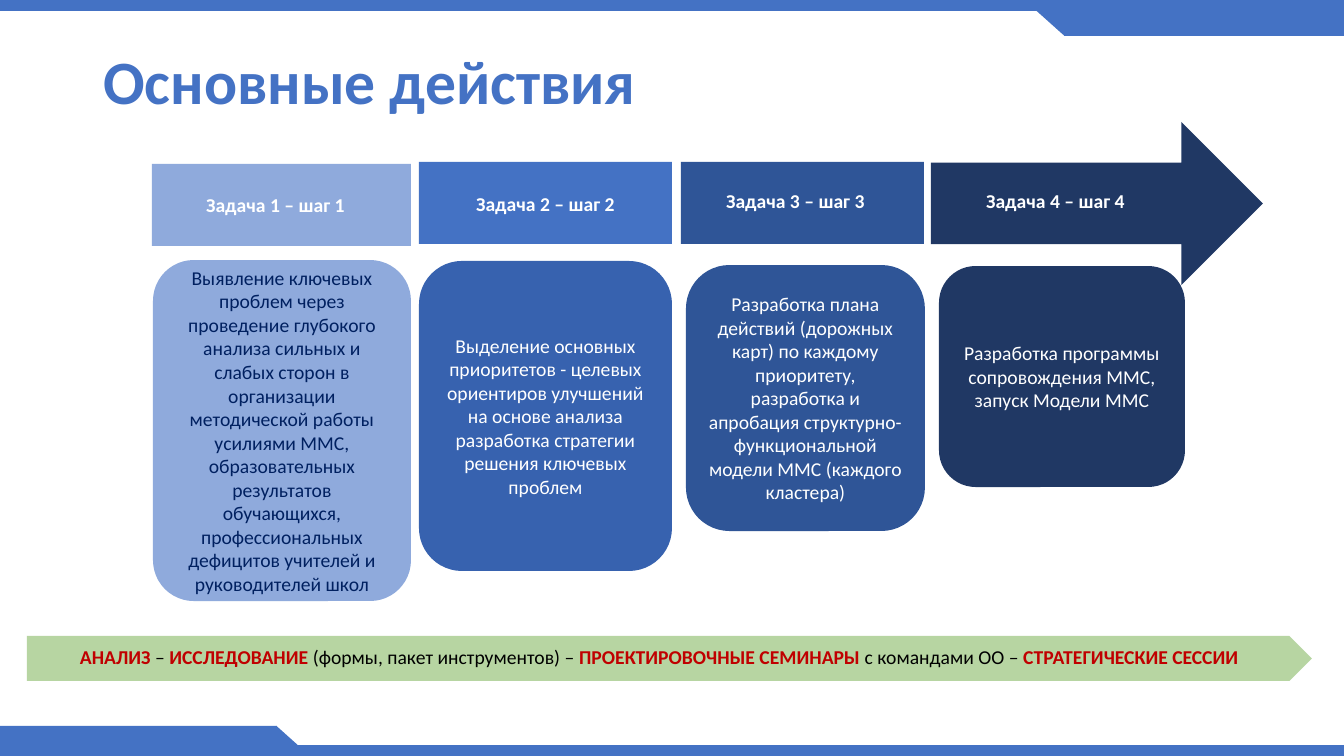
"""Builds the slide with four task steps, their descriptions and a summary bar."""
from dataclasses import dataclass

from lxml import etree
from pptx import Presentation
from pptx import util as u
from pptx.dml.color import RGBColor
from pptx.enum import shapes, text
from pptx.oxml.ns import qn

SHAPE = shapes.MSO_SHAPE


@dataclass(frozen=True)
class Theme:
    font: str = "Calibri"
    title_size: int = 44
    body_size: int = 14
    blue: str = "4472C4"
    light: str = "8FAADC"
    medium: str = "3762AF"
    deep: str = "2F5597"
    navy: str = "203864"
    ink: str = "002060"
    white: str = "FFFFFF"
    black: str = "000000"
    red: str = "C00000"
    green: str = "70AD47"


THEME = Theme()
EMU_PER_PX = 914400 / 100.8
SLIDE_SIZE = (1344, 756)

TITLE = "Основные действия"
TITLE_BOX = (93, 40, 1159, 90)

DECORATIONS = [
    (SHAPE.RECTANGLE, (0, 0, 1344, 11), 0),
    (SHAPE.RECTANGLE, (0, 745, 1344, 11), 0),
    (SHAPE.RECTANGLE, (1064, 5, 280, 31), 0),
    (SHAPE.FLOWCHART_MERGE, (1030, 5, 67, 30), 0),
    (SHAPE.RECTANGLE, (0, 726, 277, 30), 0),
    (SHAPE.FLOWCHART_MERGE, (243, 726, 67, 30), 180),
]

STEPS = [
    {"header": (SHAPE.RECTANGLE, (152, 164, 259, 82), THEME.light),
     "label": (166, 188),
     "card": ((153, 260, 258, 341), 0.158, THEME.light, THEME.ink),
     "task": "Выявление ключевых проблем через проведение глубокого анализа сильных и слабых "
             "сторон в организации методической работы усилиями ММС, образовательных результатов "
             "обучающихся, профессиональных дефицитов учителей и руководителей школ"},
    {"header": (SHAPE.RECTANGLE, (419, 162, 253, 82), THEME.blue),
     "label": (436, 187),
     "card": ((419, 261, 253, 310), 0.17, THEME.medium, THEME.white),
     "task": "Выделение основных приоритетов - целевых ориентиров улучшений на основе анализа "
             "разработка стратегии решения ключевых проблем"},
    {"header": (SHAPE.RECTANGLE, (681, 162, 243, 82), THEME.deep),
     "label": (686, 184),
     "card": ((686, 265, 239, 266), 0.182, THEME.deep, THEME.white),
     "task": "Разработка плана действий (дорожных карт) по каждому приоритету, разработка и "
             "апробация структурно-функциональной модели ММС (каждого кластера)"},
    {"header": (SHAPE.RIGHT_ARROW, (931, 122, 332, 163), THEME.navy),
     "label": (946, 184),
     "card": ((939, 266, 246, 221), 0.166, THEME.navy, THEME.white),
     "task": "Разработка программы сопровождения ММС, запуск Модели ММС"},
]
LABEL_SIZE = (219, 34)

SUMMARY_BAR = (27, 636, 1285, 45)
SUMMARY_BOX = (70, 640, 1258, 34)
SUMMARY = [
    ("АНАЛИЗ", True),
    (" – ", False),
    ("ИССЛЕДОВАНИЕ", True),
    (" (формы, пакет инструментов) – ", False),
    ("ПРОЕКТИРОВОЧНЫЕ СЕМИНАРЫ", True),
    (" с командами ОО – ", False),
    ("СТРАТЕГИЧЕСКИЕ СЕССИИ", True),
]


def px(*lengths):
    return [u.Emu(round(length * EMU_PER_PX)) for length in lengths]


def add_shape(slide, kind, box, color):
    shape = slide.shapes.add_shape(kind, *px(*box))
    shape.shadow.inherit = False
    shape.fill.solid()
    shape.fill.fore_color.rgb = RGBColor.from_string(color)
    shape.line.fill.background()
    return shape


def add_text_box(slide, box):
    text_box = slide.shapes.add_textbox(*px(*box))
    text_box.text_frame.word_wrap = True
    return text_box.text_frame


def add_run(paragraph, words, color, bold=False, size=THEME.body_size):
    run = paragraph.add_run()
    run.text = words
    font_values = {"name": THEME.font, "size": u.Pt(size), "bold": bold}
    for name, value in font_values.items():
        setattr(run.font, name, value)
    run.font.color.rgb = RGBColor.from_string(color)


def add_title(slide):
    title = slide.shapes.title
    for name, value in zip(("left", "top", "width", "height"), px(*TITLE_BOX)):
        setattr(title, name, value)
    title.text_frame.vertical_anchor = text.MSO_ANCHOR.MIDDLE
    paragraph = title.text_frame.paragraphs[0]
    paragraph.alignment = text.PP_ALIGN.LEFT
    paragraph.line_spacing = 0.9
    add_run(paragraph, TITLE, THEME.blue, True, THEME.title_size)


def add_step(slide, number, step):
    add_shape(slide, *step["header"])
    box, corner, fill, ink = step["card"]
    card = add_shape(slide, SHAPE.ROUNDED_RECTANGLE, box, fill)
    card.adjustments[0] = corner
    card.text_frame.word_wrap = True
    card.text_frame.vertical_anchor = text.MSO_ANCHOR.MIDDLE
    label = add_text_box(slide, step["label"] + LABEL_SIZE)
    lines = [
        (card.text_frame, step["task"], ink, False),
        (label, f"Задача {number} – шаг {number}", THEME.white, True),
    ]
    for frame, words, color, bold in lines:
        paragraph = frame.paragraphs[0]
        paragraph.alignment = text.PP_ALIGN.CENTER
        add_run(paragraph, words, color, bold)


def add_summary(slide):
    bar = add_shape(slide, SHAPE.PENTAGON, SUMMARY_BAR, THEME.green)
    bar_color = bar.fill._xPr.find(qn("a:solidFill"))[0]
    etree.SubElement(bar_color, qn("a:alpha"), val="50000")
    paragraph = add_text_box(slide, SUMMARY_BOX).paragraphs[0]
    for words, strong in SUMMARY:
        add_run(paragraph, words, THEME.red if strong else THEME.black, strong)


def main():
    presentation = Presentation()
    presentation.slide_width, presentation.slide_height = px(*SLIDE_SIZE)
    slide = presentation.slides.add_slide(presentation.slide_layouts[5])
    add_title(slide)
    for kind, box, rotation in DECORATIONS:
        add_shape(slide, kind, box, THEME.blue).rotation = rotation
    for number, step in enumerate(STEPS, 1):
        add_step(slide, number, step)
    add_summary(slide)
    presentation.save("out.pptx")


if __name__ == "__main__":
    main()
